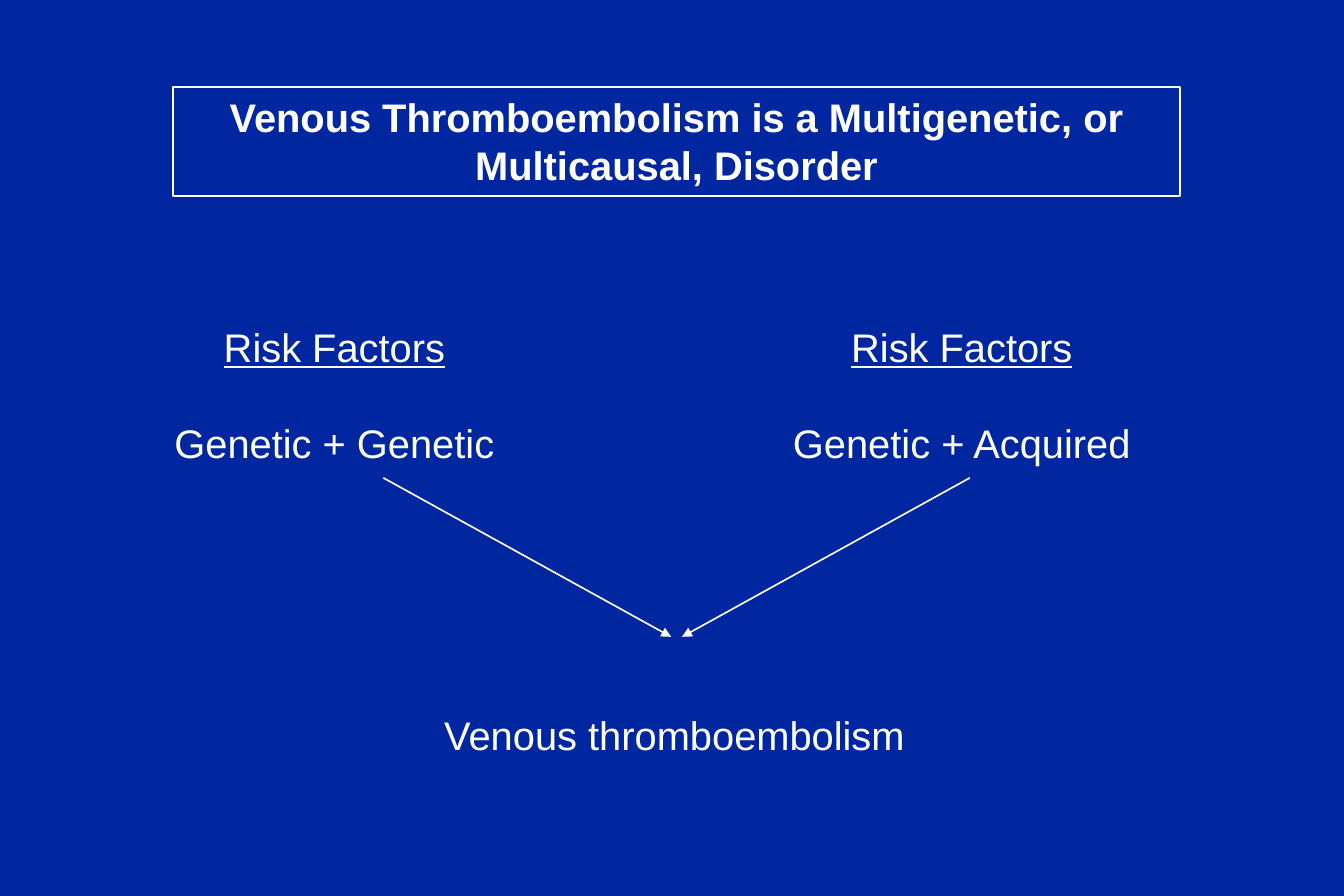
from pptx import Presentation
from pptx import util as u
from pptx.dml.color import RGBColor
from pptx.enum import shapes, text
from pptx.oxml.ns import qn
from lxml import etree

NAVY = RGBColor(0x00, 0x27, 0x9F)
WHITE = RGBColor(0xFF, 0xFF, 0xFF)
LINE_PITCH = u.Pt(28.8)


def set_frame(frame, wrap):
    frame.word_wrap = wrap
    frame.auto_size = text.MSO_AUTO_SIZE.SHAPE_TO_FIT_TEXT
    frame.vertical_anchor = text.MSO_ANCHOR.TOP
    frame.margin_left = frame.margin_right = u.Cm(0.25)
    frame.margin_top = frame.margin_bottom = u.Cm(0.13)


def add_words(paragraph, words, bold=False, underline=False):
    paragraph.alignment = text.PP_ALIGN.CENTER
    paragraph.line_spacing = LINE_PITCH
    run = paragraph.add_run()
    run.text = words
    font = run.font
    font.name, font.size = "Arial", u.Pt(24)
    font.bold, font.underline = bold, underline
    font.color.rgb = WHITE


def place_title(slide, left, top, width, height, words):
    title = slide.shapes.title
    title.left, title.top, title.width, title.height = left, top, width, height
    title.line.color.rgb = WHITE
    title.line.width = u.Pt(1)
    set_frame(title.text_frame, True)
    add_words(title.text_frame.paragraphs[0], words, bold=True)


def add_risk_factors(slide, left, top, width, height, factors):
    column = slide.shapes.add_textbox(left, top, width, height).text_frame
    set_frame(column, False)
    add_words(column.paragraphs[0], "Risk Factors", underline=True)
    combination = column.add_paragraph()
    combination.space_before = LINE_PITCH
    add_words(combination, factors)


def add_outcome(slide, left, top, width, height, words):
    outcome = slide.shapes.add_textbox(left, top, width, height).text_frame
    set_frame(outcome, False)
    add_words(outcome.paragraphs[0], words)


def add_converging_arrows(slide, left, top, width, height, gap):
    middle = left + width // 2
    for start, end in ((left, middle - gap // 2), (left + width, middle + gap // 2)):
        arrow = slide.shapes.add_connector(
            shapes.MSO_CONNECTOR.STRAIGHT, start, top, end, top + height)
        arrow.line.color.rgb = WHITE
        arrow.line.width = u.Pt(1)
        # Arrowhead, and no shadow
        outline = arrow.line._get_or_add_ln()
        etree.SubElement(outline, qn("a:tailEnd"), type="triangle")
        etree.SubElement(arrow._element.spPr, qn("a:effectLst"))


def build_slide(prs):
    slide = prs.slides.add_slide(prs.slide_layouts[5])
    slide.background.fill.solid()
    slide.background.fill.fore_color.rgb = NAVY

    # Two causes leading to one outcome
    add_converging_arrows(slide, u.Cm(8.15), u.Cm(10.16), u.Cm(12.47), u.Cm(3.38), u.Cm(0.23))
    add_outcome(slide, u.Cm(9.17), u.Cm(14.99), u.Cm(10.34), u.Cm(1.27),
                "Venous thromboembolism")

    # Risk factor columns
    for left, width, factors in ((3.45, 7.32, "Genetic + Genetic"),
                                 (16.59, 7.72, "Genetic + Acquired")):
        add_risk_factors(slide, u.Cm(left), u.Cm(6.73), u.Cm(width), u.Cm(3.3), factors)

    # Framed title
    place_title(slide, u.Cm(3.68), u.Cm(1.85), u.Cm(21.41), u.Cm(2.31),
                "Venous Thromboembolism is a Multigenetic, or Multicausal, Disorder")


def main():
    prs = Presentation()
    prs.slide_width, prs.slide_height = u.Cm(28.575), u.Cm(19.05)
    build_slide(prs)
    prs.save("out.pptx")


if __name__ == "__main__":
    main()
